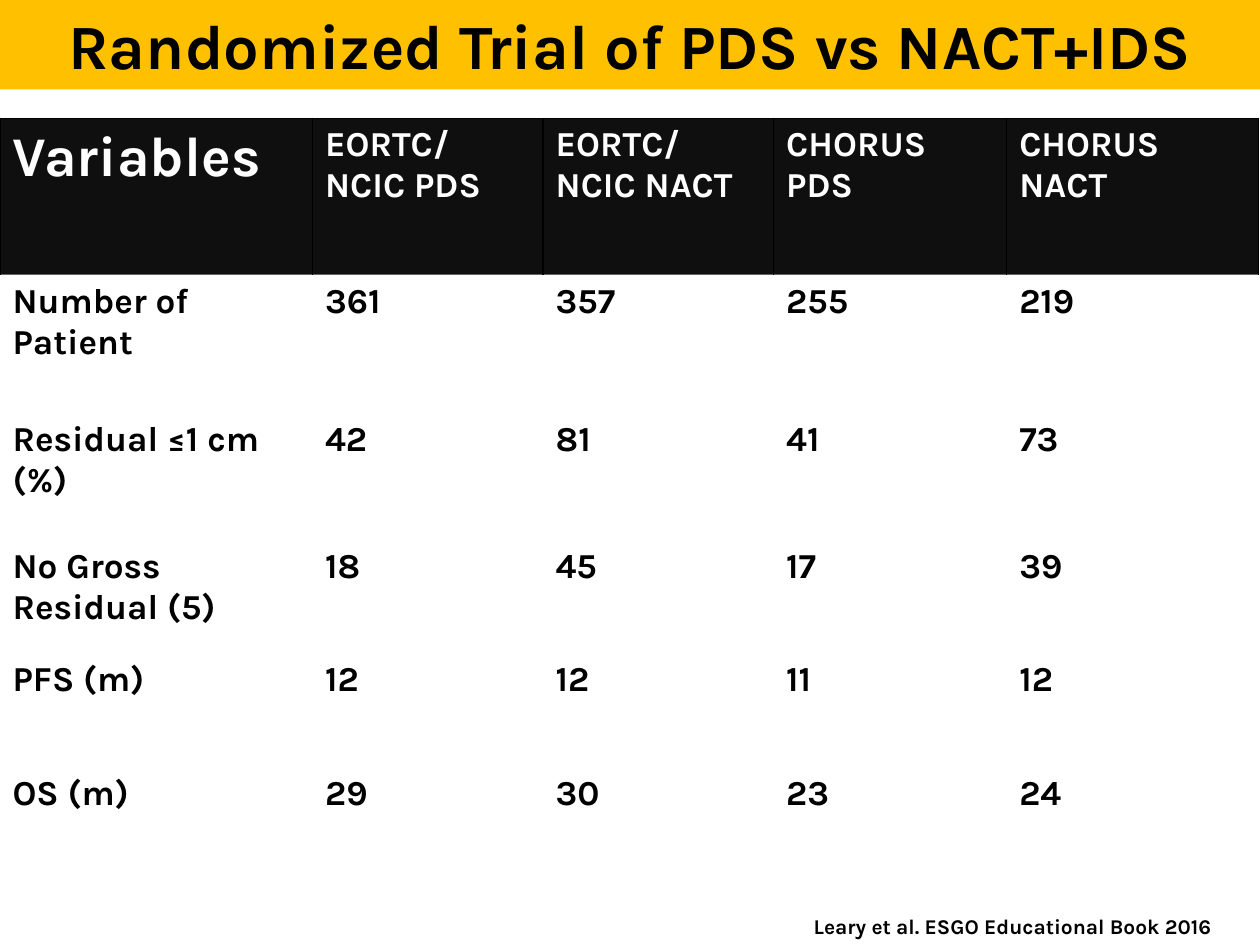
from pptx import Presentation
from pptx.dml.color import RGBColor
from pptx.enum.text import MSO_ANCHOR, PP_ALIGN
from pptx.oxml import parse_xml
from pptx.oxml.ns import nsdecls, qn
from pptx.util import Inches, Pt


def color(hex_code):
    return RGBColor.from_string(hex_code)


def write(frame, text, size=20, ink="000000", align=PP_ALIGN.LEFT):
    paragraph = frame.paragraphs[0]
    paragraph.alignment = align
    run = paragraph.add_run()
    run.text = text
    run.font.name = "Karla"
    run.font.size = Pt(size)
    run.font.bold = True
    run.font.color.rgb = color(ink)


prs = Presentation()
prs.slide_width, prs.slide_height = Inches(10), Inches(7.5)
slide = prs.slides.add_slide(prs.slide_layouts[5])

# Title band
title = slide.shapes.title
title.left, title.top = Inches(0), Inches(0)
title.width, title.height = Inches(10), Inches(0.71)
title.fill.solid()
title.fill.fore_color.rgb = color("FFC000")
title.text_frame.vertical_anchor = MSO_ANCHOR.MIDDLE
write(title.text_frame, "Randomized Trial of PDS vs NACT+IDS", size=36, align=PP_ALIGN.CENTER)

# Trial results
results = [
    ["Variables", "EORTC/ NCIC PDS", "EORTC/ NCIC NACT", "CHORUS PDS", "CHORUS NACT"],
    ["Number of Patient", "361", "357", "255", "219"],
    ["Residual ≤1 cm (%)", "42", "81", "41", "73"],
    ["No Gross Residual (5)", "18", "45", "17", "39"],
    ["PFS (m)", "12", "12", "11", "12"],
    ["OS (m)", "29", "30", "23", "24"],
]
column_widths = [2.48, 1.83, 1.83, 1.85, 2]
row_heights = [1.24, 1.1, 1.01, 0.89, 0.91, 1.12]

table = slide.shapes.add_table(
    len(results), len(column_widths), Inches(0), Inches(0.94), Inches(10), Inches(6.28)
).table
table.horz_banding = False
# Plain table style without grid
table._tbl.tblPr.find(qn("a:tableStyleId")).text = "{2D5ABB26-0587-4C30-8999-92F81FD0307C}"
for column, width in zip(table.columns, column_widths):
    column.width = Inches(width)
for row, height in zip(table.rows, row_heights):
    row.height = Inches(height)

for r, values in enumerate(results):
    is_header = r == 0
    for c, value in enumerate(values):
        cell = table.cell(r, c)
        cell.fill.solid()
        cell.fill.fore_color.rgb = color("000000" if is_header else "FFFFFF")
        write(cell.text_frame, value, size=32 if r == c == 0 else 20,
              ink="FFFFFF" if is_header else "000000")
        if is_header:
            # Slightly transparent fill and thin black borders
            cell_props = cell._tc.get_or_add_tcPr()
            fill_color = cell_props.find(qn("a:solidFill")).find(qn("a:srgbClr"))
            fill_color.append(parse_xml(f'<a:alpha {nsdecls("a")} val="94000"/>'))
            for position, side in enumerate(["lnL", "lnR", "lnT"]):
                cell_props.insert(position, parse_xml(
                    f'<a:{side} {nsdecls("a")} w="{Pt(1)}"><a:solidFill>'
                    f'<a:srgbClr val="000000"/></a:solidFill></a:{side}>'))

# Citation
citation = slide.shapes.add_textbox(Inches(6.36), Inches(7.2), Inches(3.64), Inches(0.3))
citation.text_frame.word_wrap = False
write(citation.text_frame, "Leary et al. ESGO Educational Book 2016", size=12)

prs.save("out.pptx")
